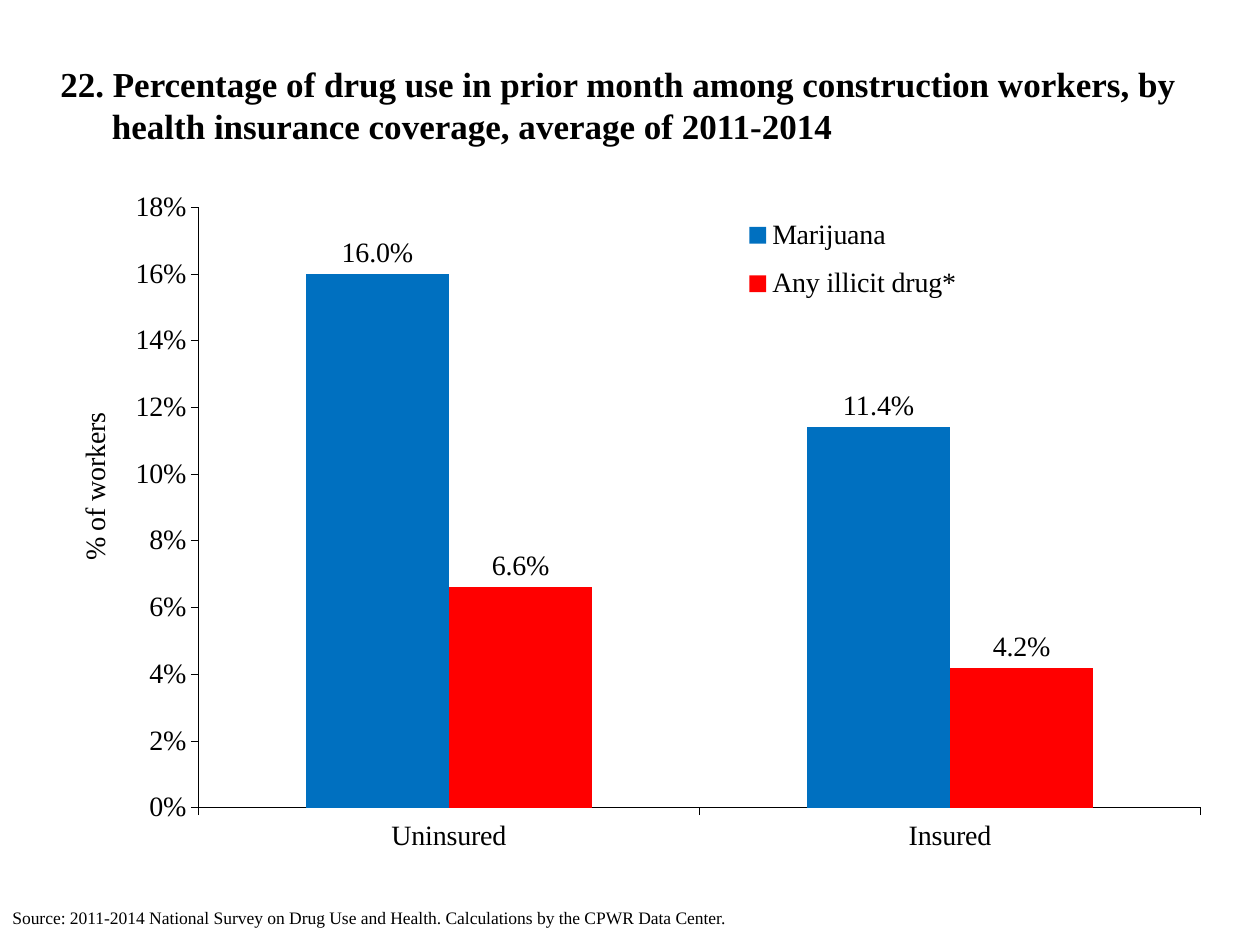
from dataclasses import dataclass

from lxml import etree
from pptx import Presentation
from pptx import util as u
from pptx.chart.data import CategoryChartData
from pptx.dml.color import RGBColor
from pptx.enum import chart as charts, text
from pptx.oxml.ns import qn


@dataclass(frozen=True)
class Theme:
    font: str = "Times New Roman"
    ink: str = "000000"
    marijuana: str = "0070C0"
    any_drug: str = "FF0000"
    title_size: float = 20
    chart_size: float = 16
    source_size: float = 10
    axis_width: float = 0.25


def set_values(target, values):
    for name, value in values.items():
        setattr(target, name, value)


def set_layout(parent, position, **shares):
    """Place a chart part by shares of the chart's size."""
    for old in parent.findall(qn("c:layout")):
        parent.remove(old)
    layout = etree.Element(qn("c:layout"))
    manual = etree.SubElement(layout, qn("c:manualLayout"))
    for name, value in shares.items():
        etree.SubElement(manual, qn(f"c:{name}")).set("val", str(value))
    parent.insert(position, layout)


class SlideBuilder:
    def __init__(self, presentation, theme):
        self.theme = theme
        self.width = presentation.slide_width
        self.height = presentation.slide_height
        self.slide = presentation.slides.add_slide(presentation.slide_layouts[6])

    def box(self, left, top, width, height):
        """Turn shares of the slide into lengths."""
        return (int(left * self.width), int(top * self.height),
                int(width * self.width), int(height * self.height))

    def style_font(self, font, size, bold=False):
        set_values(font, {"name": self.theme.font, "size": u.Pt(size), "bold": bold})
        font.color.rgb = RGBColor.from_string(self.theme.ink)

    def add_text(self, area, lines, size, bold=False, hanging=0,
                 anchor=text.MSO_ANCHOR.TOP):
        shape = self.slide.shapes.add_textbox(*self.box(*area))
        set_values(shape.text_frame, {"word_wrap": True, "vertical_anchor": anchor})
        paragraph = shape.text_frame.paragraphs[0]
        paragraph.text = "\v".join(lines)
        if hanging:
            properties = paragraph._p.get_or_add_pPr()
            properties.set("marL", str(u.Inches(hanging)))
            properties.set("indent", str(-u.Inches(hanging)))
        for run in paragraph.runs:
            self.style_font(run.font, size, bold)

    def add_column_chart(self, area, categories, series, axis_title):
        theme = self.theme
        data = CategoryChartData(number_format="0.0%")
        data.categories = categories
        for name, values, _ in series:
            data.add_series(name, values)
        chart = self.slide.shapes.add_chart(
            charts.XL_CHART_TYPE.COLUMN_CLUSTERED, *self.box(*area), data).chart
        chart.has_title = False
        self.style_font(chart.font, theme.chart_size)

        # Columns and their labels
        plot = chart.plots[0]
        set_values(plot, {"gap_width": 150, "overlap": 0,
                          "vary_by_categories": False, "has_data_labels": True})
        set_values(plot.data_labels, {
            "show_value": True, "number_format": "0.0%",
            "number_format_is_linked": False,
            "position": charts.XL_LABEL_POSITION.OUTSIDE_END})
        self.style_font(plot.data_labels.font, theme.chart_size)
        for columns, (_, _, color) in zip(plot.series, series):
            columns.format.fill.solid()
            columns.format.fill.fore_color.rgb = RGBColor.from_string(color)
        set_layout(chart._chartSpace.chart.plotArea, 0, layoutTarget="inner",
                   xMode="edge", yMode="edge", x=0.121, y=0.027, w=0.879, h=0.894)

        # Axes
        for axis in (chart.category_axis, chart.value_axis):
            set_values(axis, {"has_major_gridlines": False,
                              "major_tick_mark": charts.XL_TICK_MARK.OUTSIDE,
                              "minor_tick_mark": charts.XL_TICK_MARK.NONE})
            self.style_font(axis.tick_labels.font, theme.chart_size)
            axis.format.line.width = u.Pt(theme.axis_width)
            axis.format.line.color.rgb = RGBColor.from_string(theme.ink)
        value_axis = chart.value_axis
        set_values(value_axis, {"minimum_scale": 0, "maximum_scale": 0.18,
                                "major_unit": 0.02, "has_title": True})
        set_values(value_axis.tick_labels, {"number_format": "0%",
                                            "number_format_is_linked": False})
        title = value_axis.axis_title
        title.text_frame.text = axis_title
        self.style_font(title.text_frame.paragraphs[0].runs[0].font, theme.chart_size)
        title.text_frame._txBody.bodyPr.set("rot", "-5400000")
        title.text_frame._txBody.bodyPr.set("vert", "horz")
        set_layout(title._element, 1, xMode="edge", yMode="edge", x=0.01, y=0.325)

        # Legend
        chart.has_legend = True
        legend = chart.legend
        set_values(legend, {"position": charts.XL_LEGEND_POSITION.BOTTOM,
                            "include_in_layout": False})
        self.style_font(legend.font, theme.chart_size)
        set_layout(legend._element, 1, xMode="edge", yMode="edge",
                   x=0.57, y=0.02, w=0.25, h=0.17)


def main():
    presentation = Presentation()
    set_values(presentation, {"slide_width": u.Inches(10),
                              "slide_height": u.Inches(7.5)})
    theme = Theme()
    builder = SlideBuilder(presentation, theme)

    # Heading
    builder.add_text(
        (0.038, 0.044, 0.925, 0.133),
        ["22. Percentage of drug use in prior month among construction workers, by",
         "health insurance coverage, average of 2011-2014"],
        theme.title_size, bold=True, hanging=0.41, anchor=text.MSO_ANCHOR.MIDDLE)

    # Drug use by insurance coverage
    builder.add_column_chart(
        (0.048, 0.2, 0.905, 0.711), ["Uninsured", "Insured"],
        [("Marijuana", (0.16, 0.114), theme.marijuana),
         ("Any illicit drug*", (0.066, 0.042), theme.any_drug)],
        "% of workers")

    # Source note
    builder.add_text(
        (0, 0.953, 1, 0.036),
        ["Source: 2011-2014 National Survey on Drug Use and Health. "
         "Calculations by the CPWR Data Center."],
        theme.source_size)

    presentation.save("out.pptx")


if __name__ == "__main__":
    main()
